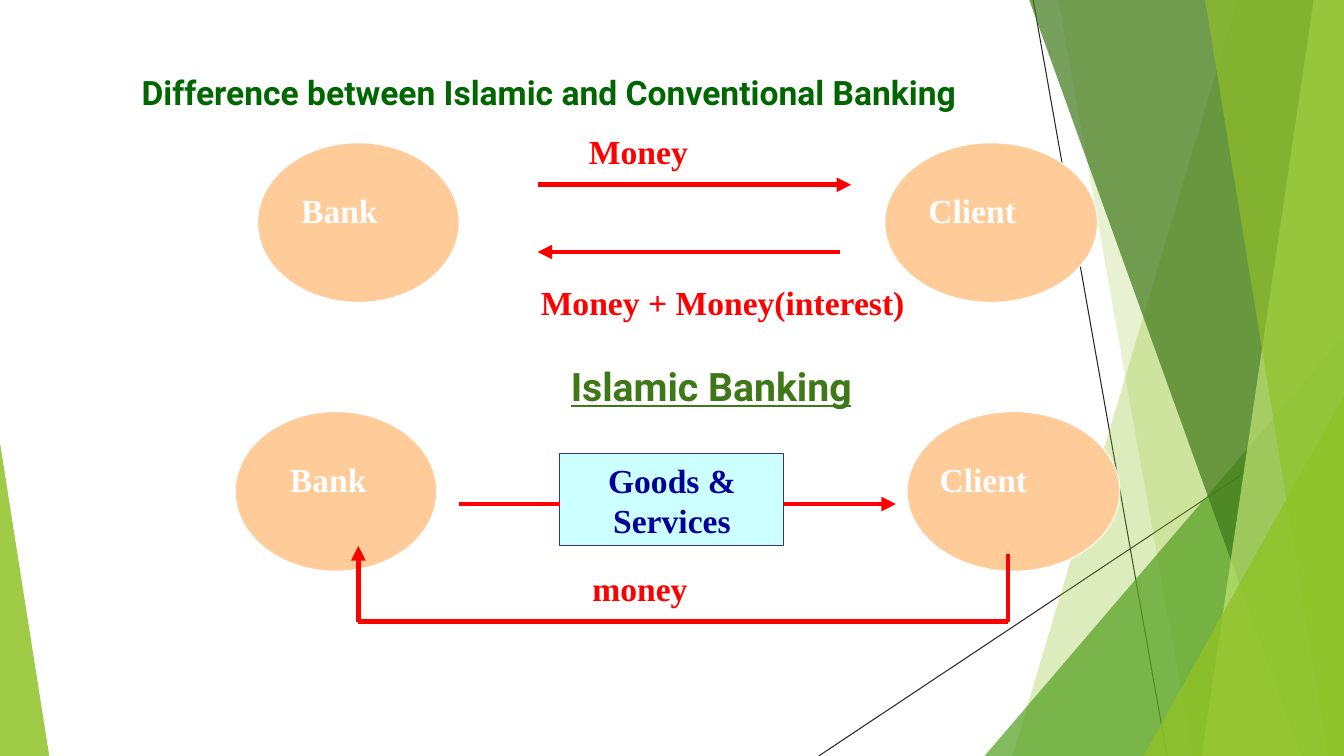
from pptx import Presentation
from pptx.dml.color import RGBColor
from pptx.enum.shapes import MSO_CONNECTOR, MSO_SHAPE
from pptx.enum.text import MSO_ANCHOR, PP_ALIGN
from pptx.oxml.ns import qn
from pptx.util import Inches, Pt
from lxml.etree import SubElement

WIDE, HIGH = Inches(13.333), Inches(7.5)
COLS, ROWS = 120, 90
SERIF, SANS = "Times New Roman", "Roboto"
HUES = {
    "white": "FFFFFF", "ink": "262626", "red": "FF0000", "peach": "FFCC99",
    "aqua": "CCFFFF", "edge": "333399", "navy": "000099", "title": "006600",
    "lime": "90C226", "leaf": "54A021", "moss": "3F7819", "pale": "C0E474",
}


def hue(name):
    return RGBColor.from_string(HUES[name])


def col(n):
    return round(WIDE * n / COLS)


def row(n):
    return round(HIGH * n / ROWS)


def area(x, y, w, h):
    return col(x), row(y), col(w), row(h)


def paint(shape, fill, edge=None, alpha=None):
    shape.shadow.inherit = False
    shape.fill.solid()
    shape.fill.fore_color.rgb = hue(fill)
    if alpha:
        tint = shape.fill._xPr.find(qn("a:solidFill"))[0]
        SubElement(tint, qn("a:alpha")).set("val", str(alpha * 1000))
    if edge:
        shape.line.color.rgb = hue(edge)
        shape.line.width = Pt(0.75)
    else:
        shape.line.fill.background()


def write(shape, text, color, size=24, font=SERIF, align=PP_ALIGN.LEFT, under=None):
    frame = shape.text_frame
    frame.word_wrap = True
    para = frame.paragraphs[0]
    para.alignment = align
    run = para.add_run()
    run.text = text
    run.font.name, run.font.size = font, Pt(size)
    run.font.bold, run.font.underline = True, under
    run.font.color.rgb = hue(color)


def label(slide, box, text, color, **style):
    write(slide.shapes.add_textbox(*area(*box)), text, color, **style)


def line(slide, start, end, color="red", width=3.5, head=False):
    link = slide.shapes.add_connector(
        MSO_CONNECTOR.STRAIGHT, col(start[0]), row(start[1]), col(end[0]), row(end[1]))
    link.line.color.rgb = hue(color)
    link.line.width = Pt(width)
    if head:
        SubElement(link.line._get_or_add_ln(), qn("a:tailEnd")).set("type", "triangle")
    SubElement(link._element.spPr, qn("a:effectLst"))


def band(slide, top, foot, color, alpha):
    """Strip from a slanted left side to the right edge of the slide."""
    form = slide.shapes.build_freeform(col(top), 0)
    form.add_line_segments([(WIDE, 0), (WIDE, HIGH), (col(foot), HIGH)], close=True)
    paint(form.convert_to_shape(), color, alpha=alpha)


def wedge(slide, left, top, width, peak, color, alpha):
    """Triangle that stands on the foot of the slide."""
    shape = slide.shapes.add_shape(
        MSO_SHAPE.ISOSCELES_TRIANGLE, *area(left, top, width, ROWS - top))
    shape.adjustments[0] = peak
    paint(shape, color, alpha=alpha)


def party(slide, x, y, w, text, place):
    oval = slide.shapes.add_shape(MSO_SHAPE.OVAL, *area(x, y, w, 19))
    paint(oval, "peach", "white")
    label(slide, (place, y + 5, 15, 6), text, "white")


def backdrop(slide):
    line(slide, (92.25, 0), (104.2, ROWS), "ink", 0.75)
    line(slide, (COLS, 48.4), (73.1, ROWS), "ink", 0.75)
    band(slide, 110.5, 90.4, "lime", 30)
    band(slide, 94.5, 106.5, "lime", 20)
    wedge(slide, 87.9, 40, 32.1, 1, "leaf", 72)
    band(slide, 91.9, 116.2, "moss", 70)
    band(slide, 117.3, 107.3, "pale", 70)
    band(slide, 107.6, 118.6, "lime", 65)
    wedge(slide, 102.1, 47.2, 17.9, 1, "lime", 80)
    wedge(slide, 0, 52.7, 4.4, 0, "lime", 85)


def lending(slide):
    party(slide, 23, 17, 18, "Bank", 26)
    party(slide, 79, 17, 19, "Client", 82)
    line(slide, (48, 22), (76, 22), head=True)
    line(slide, (75, 30), (48, 30), head=True)
    label(slide, (51.7, 15, 20, 6), "Money", "red")
    label(slide, (47.4, 33, 36, 6), "Money + Money(interest)", "red")


def trade(slide):
    label(slide, (32, 42.6, 63, 7), "Islamic Banking", "moss",
          size=28, font=SANS, align=PP_ALIGN.CENTER, under=True)
    party(slide, 21, 49, 18, "Bank", 25)
    party(slide, 81, 49, 19, "Client", 83)
    goods = slide.shapes.add_shape(MSO_SHAPE.RECTANGLE, *area(50, 54, 20, 11))
    paint(goods, "aqua", "edge")
    goods.text_frame.vertical_anchor = MSO_ANCHOR.MIDDLE
    write(goods, "Goods & Services", "navy", align=PP_ALIGN.CENTER)
    line(slide, (41, 60), (50, 60))
    line(slide, (70, 60), (80, 60), head=True)
    # Payment runs back below both parties
    line(slide, (90, 66), (90, 74))
    line(slide, (90, 74), (32, 74))
    line(slide, (32, 74), (32, 65), head=True)
    label(slide, (52, 67, 17, 6), "money", "red")


def main():
    deck = Presentation()
    deck.slide_width, deck.slide_height = WIDE, HIGH
    slide = deck.slides.add_slide(deck.slide_layouts[6])
    backdrop(slide)
    label(slide, (6.7, 8, 84.6, 7), "Difference between Islamic and Conventional Banking",
          "title", font=SANS, align=PP_ALIGN.CENTER)
    lending(slide)
    trade(slide)
    deck.save("out.pptx")


if __name__ == "__main__":
    main()
